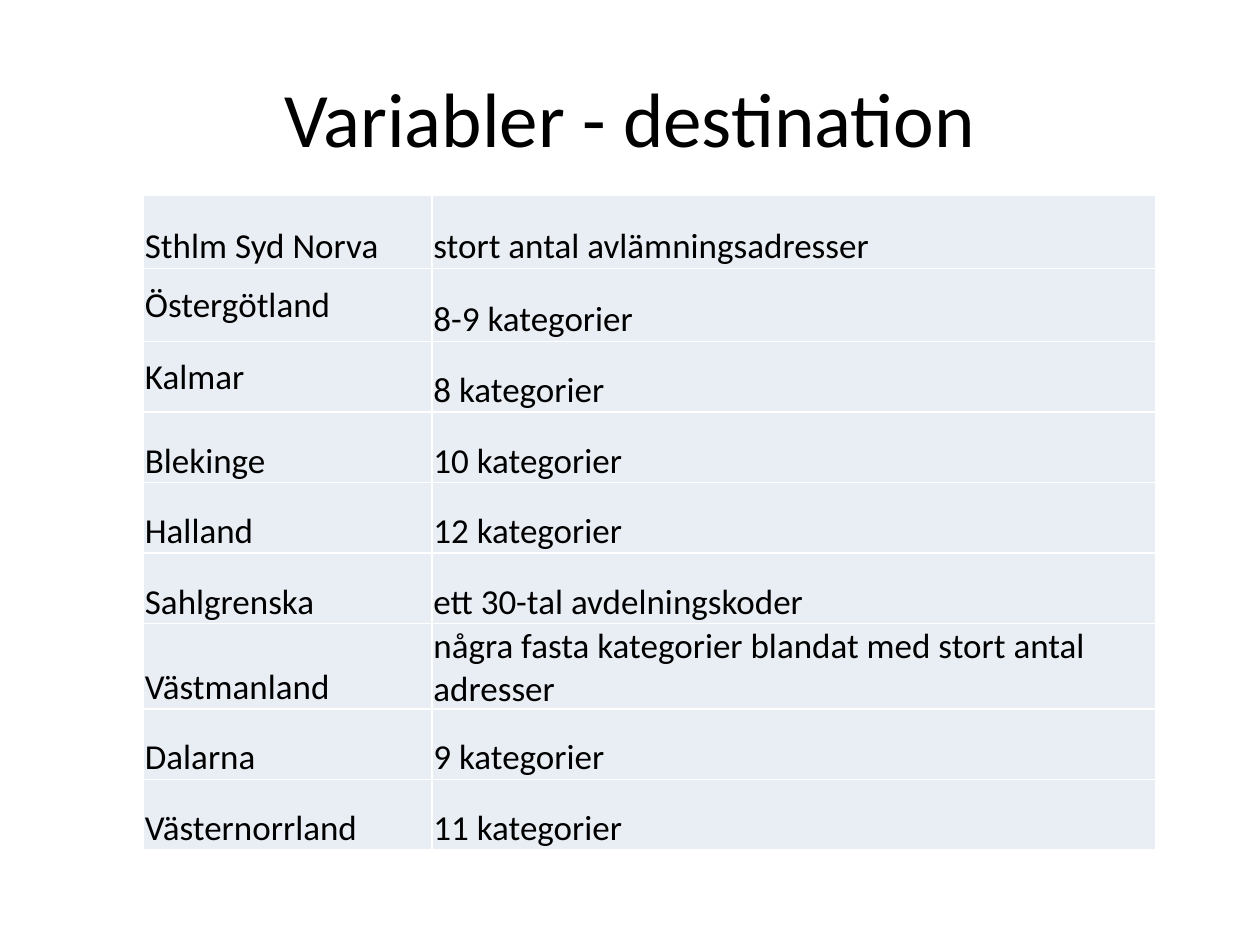
from pptx import Presentation
from pptx.dml.color import RGBColor
from pptx.enum.text import MSO_ANCHOR as Anchor, PP_ALIGN as Align
from pptx.oxml import parse_xml
from pptx.oxml.ns import nsdecls
from pptx.util import Inches, Pt

INK, PALE, WHITE = "000000", "E9EDF4", "FFFFFF"
COLS = [2.29, 5.74]
LOW, TALL, WRAP = 0.56, 0.58, 0.66

# Name, destination, row height, anchor of the name
ROWS = [
    ("Sthlm Syd Norva", "stort antal avlämningsadresser", TALL, Anchor.BOTTOM),
    ("Östergötland", "8-9 kategorier", TALL, Anchor.MIDDLE),
    ("Kalmar", "8 kategorier", LOW, Anchor.MIDDLE),
    ("Blekinge", "10 kategorier", LOW, Anchor.BOTTOM),
    ("Halland", "12 kategorier", LOW, Anchor.BOTTOM),
    ("Sahlgrenska", "ett 30-tal avdelningskoder", LOW, Anchor.BOTTOM),
    ("Västmanland", "några fasta kategorier blandat med stort antal adresser",
     WRAP, Anchor.BOTTOM),
    ("Dalarna", "9 kategorier", LOW, Anchor.BOTTOM),
    ("Västernorrland", "11 kategorier", LOW, Anchor.BOTTOM),
]


def color(code):
    return RGBColor.from_string(code)


def apply(item, form):
    for name, value in form.items():
        setattr(item, name, value)


def write(frame, text, size, align):
    para = frame.paragraphs[0]
    para.alignment = align
    run = para.add_run()
    apply(run, {"text": text})
    apply(run.font, {"name": "Calibri", "size": Pt(size)})
    run.font.color.rgb = color(INK)


def add_title(slide, text):
    box = slide.shapes.add_textbox(Inches(0.5), Inches(0.3), Inches(9), Inches(1.25))
    apply(box.text_frame, {"word_wrap": True, "vertical_anchor": Anchor.MIDDLE})
    write(box.text_frame, text, 44, Align.CENTER)


def add_edges(cell, code, width):
    props = cell._tc.get_or_add_tcPr()
    for spot, side in enumerate("LRTB"):
        props.insert(spot, parse_xml(
            f'<a:ln{side} {nsdecls("a")} w="{Pt(width)}"><a:solidFill>'
            f'<a:srgbClr val="{code}"/></a:solidFill></a:ln{side}>'))


def fill_cell(cell, text, anchor):
    thin = Inches(0.01)
    apply(cell, {"margin_left": thin, "margin_right": thin, "margin_top": thin,
                 "margin_bottom": 0, "vertical_anchor": anchor})
    cell.fill.solid()
    cell.fill.fore_color.rgb = color(PALE)
    add_edges(cell, WHITE, 1)
    write(cell.text_frame, text, 20, Align.LEFT)


def add_grid(slide):
    high = sum(row[2] for row in ROWS)
    table = slide.shapes.add_table(len(ROWS), len(COLS), Inches(1.14), Inches(1.55),
                                   Inches(sum(COLS)), Inches(high)).table
    apply(table, {"first_row": False, "horz_banding": False})
    for col, width in zip(table.columns, COLS):
        col.width = Inches(width)
    for line, (name, dest, height, anchor) in zip(table.rows, ROWS):
        line.height = Inches(height)
        fill_cell(line.cells[0], name, anchor)
        fill_cell(line.cells[1], dest, Anchor.BOTTOM)


def main():
    deck = Presentation()
    apply(deck, {"slide_width": Inches(10), "slide_height": Inches(7.5)})
    slide = deck.slides.add_slide(deck.slide_layouts[6])
    add_title(slide, "Variabler - destination")
    add_grid(slide)
    deck.save("out.pptx")


if __name__ == "__main__":
    main()
